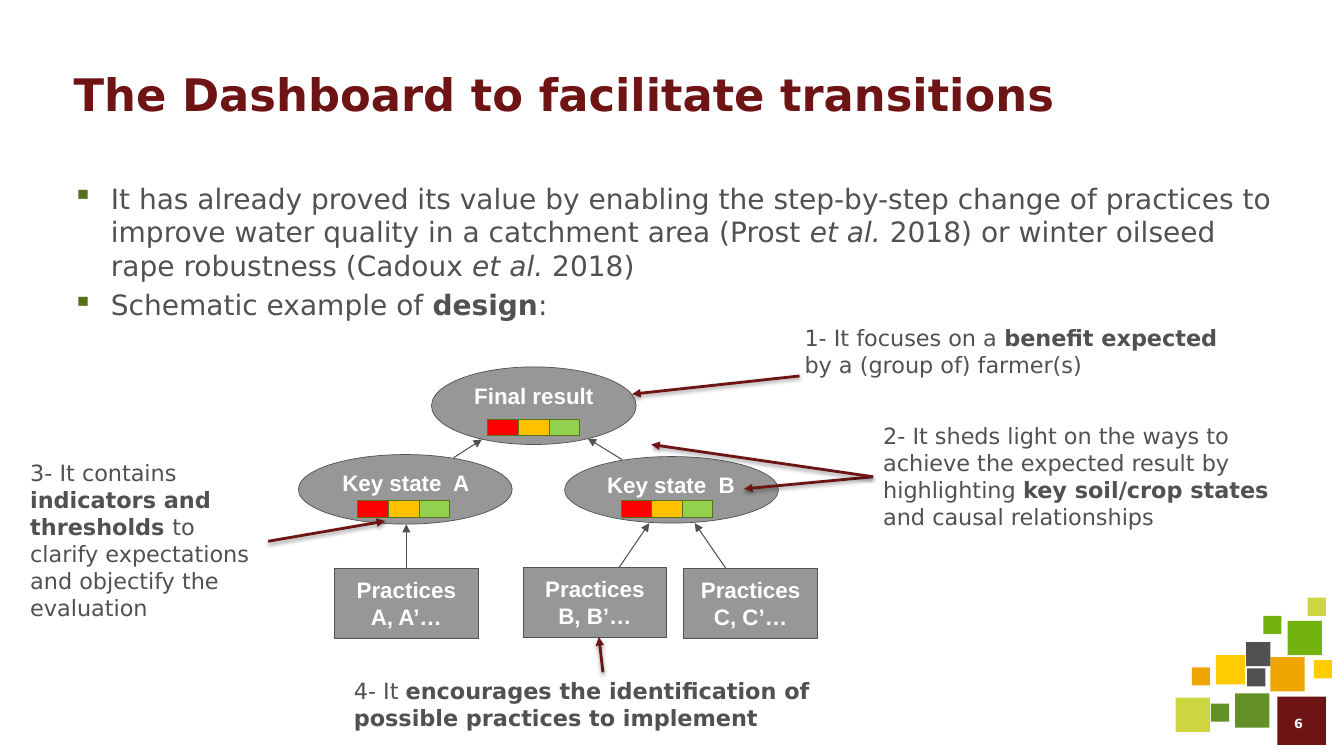
from lxml import etree
from pptx import Presentation
from pptx.dml.color import RGBColor
from pptx.enum.shapes import MSO_CONNECTOR, MSO_SHAPE
from pptx.enum.text import MSO_ANCHOR, PP_ALIGN
from pptx.oxml.ns import qn
from pptx.util import Pt

PX = 9144
RECT, OVAL = MSO_SHAPE.RECTANGLE, MSO_SHAPE.OVAL
STRAIGHT = MSO_CONNECTOR.STRAIGHT
LEFT, CENTER = PP_ALIGN.LEFT, PP_ALIGN.CENTER
TOP, MIDDLE = MSO_ANCHOR.TOP, MSO_ANCHOR.MIDDLE

THEME = {
    "maroon": "6E1415", "ink": "515151", "node": "979797", "white": "FFFFFF",
    "lime": "CDD63E", "orange": "EFA500", "moss": "639027", "leaf": "73B310",
    "yellow": "FFCC00", "bullet": "53721A",
    "bad": "FF0000", "medium": "FFC000", "good": "92D050",
    "body_font": "DejaVu Sans", "node_font": "Arial",
    "title": 32, "body": 20, "label": 16, "page": 9,
}

presentation = Presentation()
presentation.slide_width = 1333 * PX
presentation.slide_height = 750 * PX
slide = presentation.slides.add_slide(presentation.slide_layouts[6])
shapes = slide.shapes


def add_block(kind, left, top, width, height, fill, line=None, weight=0.5):
    block = shapes.add_shape(kind, left * PX, top * PX, width * PX, height * PX)
    block.shadow.inherit = False
    block.fill.solid()
    block.fill.fore_color.rgb = RGBColor.from_string(THEME[fill])
    if line:
        block.line.color.rgb = RGBColor.from_string(THEME[line])
        block.line.width = Pt(weight)
    else:
        block.line.fill.background()
    return block


def write(frame, paragraphs, size, color="ink", font="body_font",
          align=LEFT, anchor=TOP, wrap=True):
    frame.word_wrap = wrap
    frame.vertical_anchor = anchor
    frame.margin_left = frame.margin_right = 5 * PX
    frame.margin_top = frame.margin_bottom = 5 * PX
    for index, runs in enumerate(paragraphs):
        paragraph = frame.add_paragraph() if index else frame.paragraphs[0]
        paragraph.alignment = align
        for text, style in runs:
            run = paragraph.add_run()
            run.text = text
            run.font.name = THEME[font]
            run.font.size = Pt(THEME[size])
            run.font.color.rgb = RGBColor.from_string(THEME[color])
            run.font.bold = style == "bold"
            run.font.italic = style == "italic"


for left, top, side, fill in [
    (1267, 691, 48, "maroon"), (1166, 692, 34, "lime"),
    (1260, 652, 34, "orange"), (1225, 688, 34, "moss"),
    (1277, 616, 34, "leaf"), (1236, 637, 24, "ink"),
    (1206, 650, 29, "yellow"), (1297, 593, 18, "lime"),
    (1182, 662, 18, "orange"), (1201, 698, 18, "moss"),
    (1253, 611, 18, "leaf"), (1237, 663, 18, "ink"),
    (1303, 655, 18, "yellow"),
]:
    add_block(RECT, left, top, side, side, fill)

title = shapes.add_textbox(68 * PX, 30 * PX, 1198 * PX, 125 * PX)
write(title.text_frame, [[("The Dashboard to facilitate transitions", "bold")]],
      "title", "maroon", anchor=MIDDLE)

page_number = shapes.add_textbox(1278 * PX, 705 * PX, 20 * PX, 25 * PX)
write(page_number.text_frame, [[("6", "bold")]], "page", "white",
      align=CENTER, anchor=MIDDLE, wrap=False)

evidence = shapes.add_textbox(67 * PX, 175 * PX, 1200 * PX, 150 * PX)
write(evidence.text_frame, [
    [("It has already proved its value by enabling the step-by-step change of "
      "practices to improve water quality in a catchment area (Prost ", ""),
     ("et al. ", "italic"),
     ("2018) or winter oilseed rape robustness (Cadoux ", ""),
     ("et al. ", "italic"), ("2018)", "")],
    [("Schematic example of ", ""), ("design", "bold"), (":", "")],
], "body")
for point in evidence.text_frame.paragraphs:
    properties = point._p.get_or_add_pPr()
    properties.set("marL", str(38 * PX))
    properties.set("indent", str(-38 * PX))
    bullet_color = etree.SubElement(properties, qn("a:buClr"))
    etree.SubElement(bullet_color, qn("a:srgbClr"), val=THEME["bullet"])
    etree.SubElement(properties, qn("a:buChar"), char="▪")
evidence.text_frame.paragraphs[1].space_before = Pt(4)

for name, left, top, width, height, name_left, name_width in [
    ("Key state  B", 560, 453, 212, 66, 596, 139),
    ("Final result", 428, 364, 203, 77, 463, 133),
    ("Key state  A", 296, 451, 212, 69, 333, 139),
]:
    add_block(OVAL, left, top, width, height, "node", "ink")
    state = shapes.add_textbox(name_left * PX, (top + 10) * PX, name_width * PX, 36 * PX)
    write(state.text_frame, [[(name, "bold")]], "label", "white", "node_font", CENTER)

practices = {}
for letter, left, top, width in [("A", 332, 564, 142), ("B", 519, 563, 142), ("C", 678, 564, 133)]:
    practices[letter] = add_block(RECT, left, top, width, 69, "node", "ink")
    write(practices[letter].text_frame, [[(f"Practices {letter}, {letter}’…", "bold")]],
          "label", "white", "node_font", CENTER, MIDDLE)
    practices[letter].text_frame.margin_left = 10 * PX
    practices[letter].text_frame.margin_right = 10 * PX

for left, top in [(616, 497), (355, 497), (484, 416)]:
    for offset, width, level in [(54, 37, "good"), (0, 37, "bad"), (30, 31, "medium")]:
        add_block(RECT, left + offset, top, width, 16, level, "bullet", 0.75)

for left, top, width, height, runs in [
    (793, 317, 437, 63, [
        ("1- It focuses on a ", ""), ("benefit expected", "bold"),
        (" by a (group of) farmer(s)", "")]),
    (871, 414, 437, 116, [
        ("2- It sheds light on the ways to achieve the expected result by highlighting ", ""),
        ("key soil/crop states ", "bold"), ("and causal relationships", "")]),
    (25, 451, 236, 168, [
        ("3- It contains ", ""), ("indicators and thresholds ", "bold"),
        ("to clarify expectations and objectify the evaluation", "")]),
    (346, 667, 511, 63, [
        ("4- It ", ""),
        ("encourages the identification of possible practices to implement", "bold")]),
]:
    callout = shapes.add_textbox(left * PX, top * PX, width * PX, height * PX)
    write(callout.text_frame, [runs], "label")

causal_links = [
    (617, 456, 583, 435, None), (403, 564, 403, 520, "A"),
    (614, 563, 644, 519, None), (720, 564, 689, 519, None),
    (450, 454, 478, 436, None),
]
callout_arrows = [
    (793, 373, 627, 391, None), (866, 473, 738, 485, None),
    (866, 473, 646, 441, None), (266, 537, 382, 517, None),
    (598, 667, 594, 632, None),
]
for arrows, color, weight, shadowed in [
    (causal_links, "ink", 0.75, False), (callout_arrows, "maroon", 2, True),
]:
    for x1, y1, x2, y2, source in arrows:
        arrow = shapes.add_connector(STRAIGHT, x1 * PX, y1 * PX, x2 * PX, y2 * PX)
        if source:
            arrow.begin_connect(practices[source], 0)
        arrow.line.color.rgb = RGBColor.from_string(THEME[color])
        arrow.line.width = Pt(weight)
        etree.SubElement(arrow.line._get_or_add_ln(), qn("a:tailEnd"), type="triangle")
        effects = etree.SubElement(arrow._element.spPr, qn("a:effectLst"))
        if shadowed:
            shadow = etree.SubElement(effects, qn("a:outerShdw"), blurRad=str(Pt(3)),
                                      dist=str(Pt(1.6)), dir="5400000", rotWithShape="0")
            shade = etree.SubElement(shadow, qn("a:srgbClr"), val="000000")
            etree.SubElement(shade, qn("a:alpha"), val="38000")

presentation.save("out.pptx")
